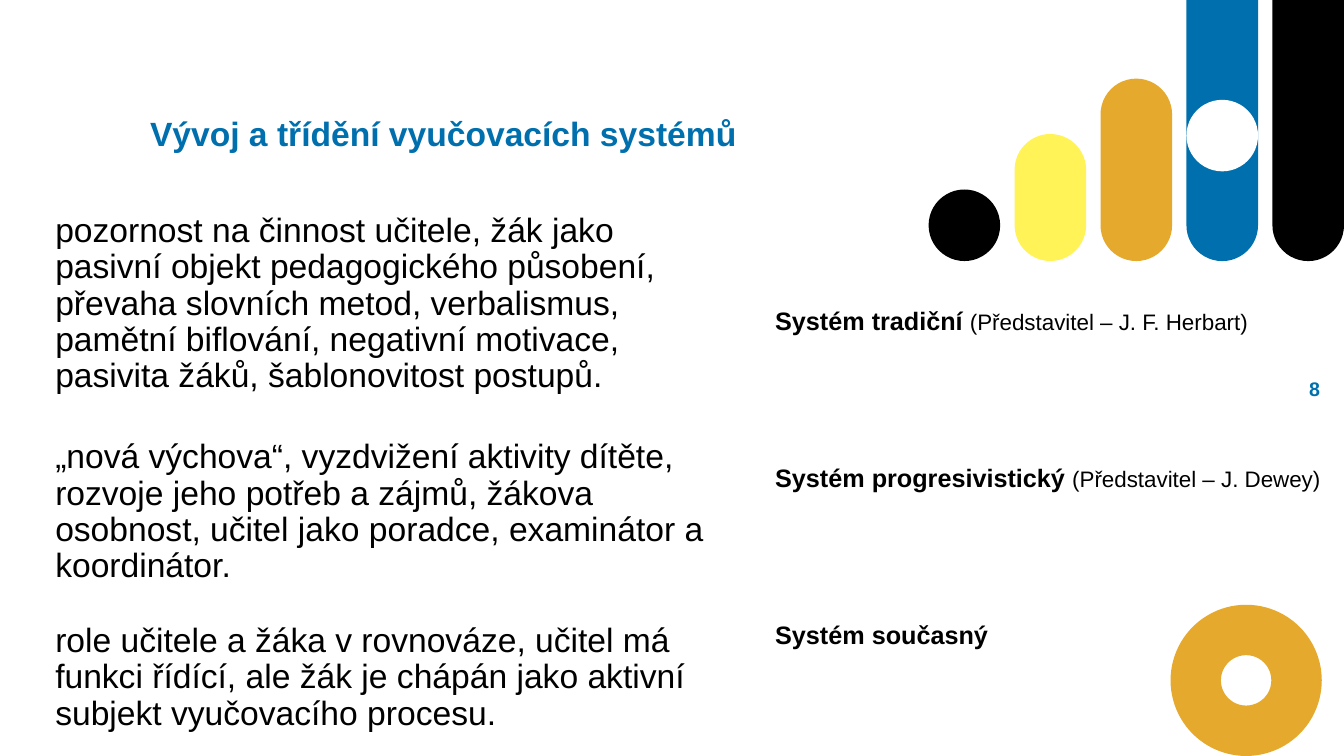
from pptx import Presentation
from pptx.dml.color import RGBColor
from pptx.enum.shapes import MSO_SHAPE as Preset
from pptx.enum.text import MSO_ANCHOR as Anchor, PP_ALIGN as Align
from pptx.util import Inches, Pt

COLORS = {
    "blue": "006FAD",
    "gold": "E5AA2D",
    "yellow": "FFF358",
    "black": "000000",
    "white": "FFFFFF",
}


class SlideBuilder:
    font = "Arial"

    def __init__(self, slide):
        self.slide = slide

    def color(self, name):
        return RGBColor.from_string(COLORS[name])

    def shape(self, preset, left, top, width, height, color, adjustments=()):
        figure = self.slide.shapes.add_shape(
            preset, Inches(left), Inches(top), Inches(width), Inches(height))
        for index, value in enumerate(adjustments):
            figure.adjustments[index] = value
        figure.shadow.inherit = False
        figure.fill.solid()
        figure.fill.fore_color.rgb = self.color(color)
        figure.line.fill.background()

    def text(self, left, top, width, height, paragraphs, color="black",
             spacing=None, align=Align.LEFT, anchor=Anchor.TOP):
        box = self.slide.shapes.add_textbox(
            Inches(left), Inches(top), Inches(width), Inches(height))
        frame = box.text_frame
        frame.word_wrap = True
        frame.vertical_anchor = anchor
        for index, (before, runs) in enumerate(paragraphs):
            paragraph = frame.add_paragraph() if index else frame.paragraphs[0]
            paragraph.alignment = align
            paragraph.space_before = Pt(before)
            paragraph.line_spacing = spacing
            for words, size, bold in runs:
                run = paragraph.add_run()
                run.text = words
                run.font.name = self.font
                run.font.size = Pt(size)
                run.font.bold = bold
                run.font.color.rgb = self.color(color)


def main():
    deck = Presentation()
    deck.slide_width = Inches(13.33)
    deck.slide_height = Inches(7.5)
    page = SlideBuilder(deck.slides.add_slide(deck.slide_layouts[6]))

    page.text(12.75, 3.69, 0.44, 0.34, [(0, [("8", 14, True)])],
              color="blue", align=Align.RIGHT, anchor=Anchor.MIDDLE)
    page.text(1.39, 1.12, 6.54, 0.46,
              [(0, [("Vývoj a třídění vyučovacích systémů", 24, True)])],
              color="blue", spacing=0.9)

    page.shape(Preset.DONUT, 11.61, 6, 1.5, 1.5, "gold", [1 / 3])

    first_left, last_left, bar_width, bar_bottom = 9.21, 12.62, 0.71, 2.59
    hanging = (Preset.ROUND_2_SAME_RECTANGLE, [0, 0.5])
    pill = (Preset.ROUNDED_RECTANGLE, [0.5])
    bars = [
        ((Preset.OVAL, []), 1.88, "black"),
        (pill, 1.33, "yellow"),
        (pill, 0.78, "gold"),
        (hanging, 0, "blue"),
        (hanging, 0, "black"),
    ]
    pitch = (last_left - first_left) / (len(bars) - 1)
    for column, ((preset, rounding), top, color) in enumerate(bars):
        page.shape(preset, first_left + column * pitch, top, bar_width,
                   bar_bottom - top, color, rounding)
    page.shape(Preset.OVAL, first_left + 3 * pitch, 0.99,
               bar_width, bar_width, "white")

    descriptions = [
        (3, "pozornost na činnost učitele, žák jako pasivní objekt "
            "pedagogického působení, převaha slovních metod, verbalismus, "
            "pamětní biflování, negativní motivace, pasivita žáků, "
            "šablonovitost postupů."),
        (32, "„nová výchova“, vyzdvižení aktivity dítěte, rozvoje jeho "
             "potřeb a zájmů, žákova osobnost, učitel jako poradce, "
             "examinátor a koordinátor."),
        (27.6, "role učitele a žáka v rovnováze, učitel má funkci řídící, "
               "ale žák je chápán jako aktivní subjekt vyučovacího procesu."),
    ]
    page.text(0.45, 2.07, 6.7, 3.92,
              [(before, [(words, 24, False)]) for before, words in descriptions],
              spacing=0.9)

    system_gap = 94.8
    page.text(7.59, 3.04, 5.67, 4.76, [
        (3, [("Systém tradiční ", 18, True),
             ("(Představitel – J. F. Herbart)", 16, False)]),
        (system_gap, [("Systém progresivistický ", 18, True),
                      ("(Představitel – J. Dewey)", 16, False)]),
        (system_gap, [("Systém současný", 18, True)]),
    ], spacing=0.8)

    deck.save("out.pptx")


if __name__ == "__main__":
    main()
